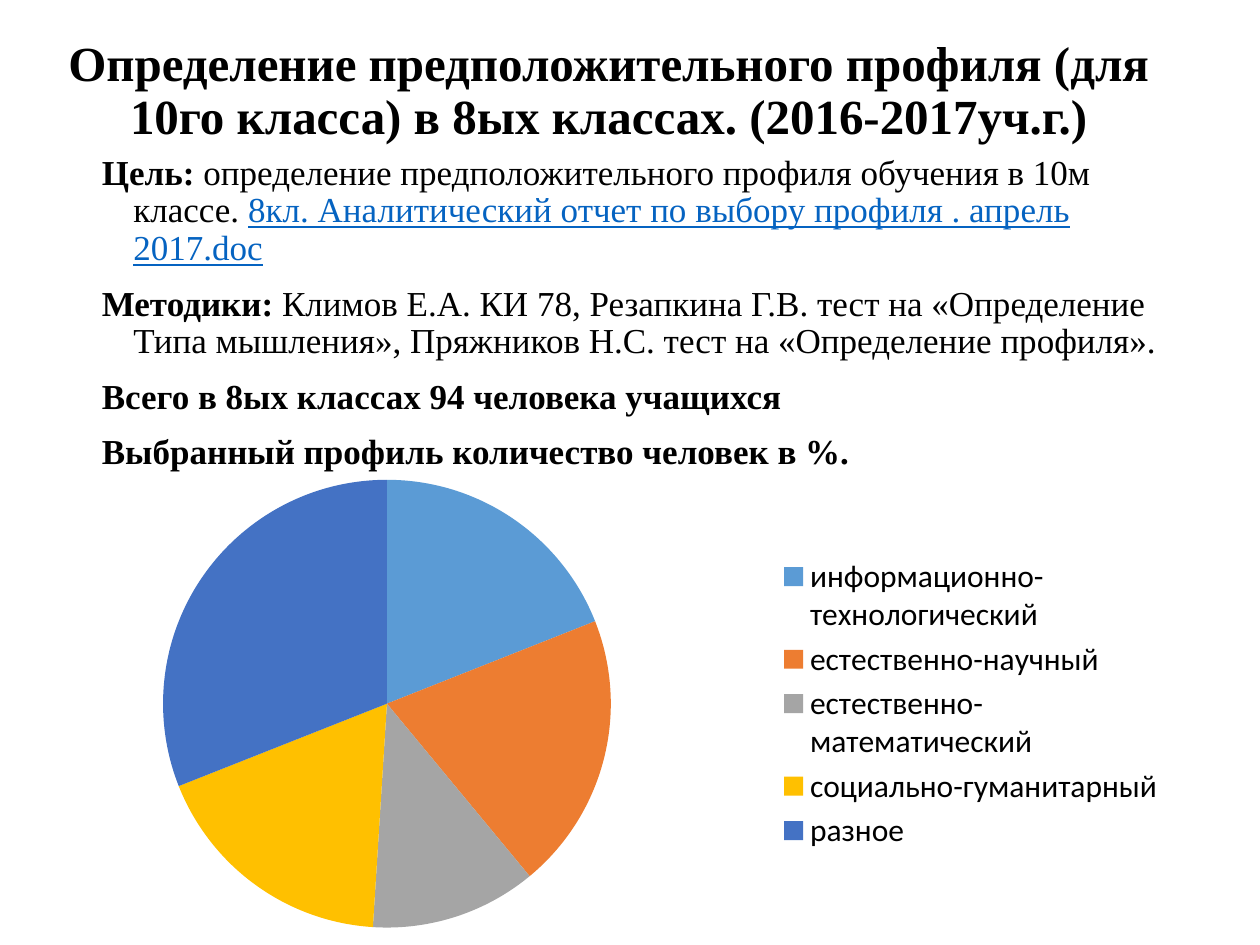
from pptx import Presentation
from pptx.chart.data import CategoryChartData
from pptx.dml.color import RGBColor
from pptx.enum.chart import XL_CHART_TYPE, XL_LEGEND_POSITION
from pptx.enum.text import MSO_ANCHOR, MSO_AUTO_SIZE, PP_ALIGN
from pptx.util import Inches, Pt

PIE = XL_CHART_TYPE.PIE
LEGEND_RIGHT = XL_LEGEND_POSITION.RIGHT
MIDDLE = MSO_ANCHOR.MIDDLE
NO_FIT = MSO_AUTO_SIZE.NONE
CENTER = PP_ALIGN.CENTER

BLACK = "000000"
LINK_BLUE = "0563C1"
SERIF = "Times New Roman"
HEADING = {"name": SERIF, "size": Pt(28), "bold": True}
PLAIN = {"name": SERIF, "size": Pt(20), "bold": False}
STRONG = {**PLAIN, "bold": True}
LINKED = {**PLAIN, "underline": True}
CHART_FONT = {"name": "Calibri", "size": Pt(18)}

TITLE = "Определение предположительного профиля (для 10го класса) в 8ых классах. (2016-2017уч.г.)"
PARAGRAPHS = [
    [
        ("Цель:", STRONG, BLACK),
        (" определение предположительного профиля обучения в 10м классе. ", PLAIN, BLACK),
        ("8кл. Аналитический отчет по выбору профиля . апрель 2017.doc", LINKED, LINK_BLUE),
    ],
    [
        ("Методики:", STRONG, BLACK),
        (" Климов Е.А. КИ 78, Резапкина Г.В. тест на «Определение Типа мышления», "
         "Пряжников Н.С. тест на «Определение профиля».", PLAIN, BLACK),
    ],
    [("Всего в 8ых классах 94 человека учащихся", STRONG, BLACK)],
    [("Выбранный профиль количество человек в %.", STRONG, BLACK)],
]
PROFILES = [
    ("информационно-технологический", 19, "5B9BD5"),
    ("естественно-научный", 20, "ED7D31"),
    ("естественно-математический", 12, "A5A5A5"),
    ("социально-гуманитарный", 18, "FFC000"),
    ("разное", 31, "4472C4"),
]


def set_font(font, values, color):
    for name, value in values.items():
        setattr(font, name, value)
    font.color.rgb = RGBColor.from_string(color)


def add_span(para, text, values, color):
    span = para.add_run()
    span.text = text
    set_font(span.font, values, color)


def place_title(page):
    box = page.shapes.title
    box.left, box.top, box.width, box.height = map(Inches, (0.34, 0.42, 8.98, 0.62))
    frame = box.text_frame
    frame.word_wrap = True
    frame.auto_size = NO_FIT
    frame.vertical_anchor = MIDDLE
    para = frame.paragraphs[0]
    para.alignment = CENTER
    para.line_spacing = 0.9
    add_span(para, TITLE, HEADING, BLACK)


def add_body(page):
    frame = page.shapes.add_textbox(*map(Inches, (0.71, 1.18, 8.61, 6.08))).text_frame
    frame.word_wrap = True
    for index, spans in enumerate(PARAGRAPHS):
        para = frame.add_paragraph() if index else frame.paragraphs[0]
        para.line_spacing = 0.9
        para.space_before = Pt(10 if index else 0)
        properties = para._p.get_or_add_pPr()
        properties.set("marL", str(Inches(0.25)))
        properties.set("indent", str(Inches(-0.25)))
        for span in spans:
            add_span(para, *span)


def add_pie(page):
    names, values, colors = zip(*PROFILES)
    data = CategoryChartData()
    data.categories = names
    data.add_series("Series 1", values)
    chart = page.shapes.add_chart(PIE, *map(Inches, (0, 3.67, 9.35, 3.83)), data).chart
    chart.has_title = False
    set_font(chart.font, CHART_FONT, BLACK)
    chart.has_legend = True
    chart.legend.position = LEGEND_RIGHT
    chart.legend.include_in_layout = False
    plot = chart.plots[0]
    plot.vary_by_categories = True
    for index, color in enumerate(colors):
        fill = plot.series[0].points[index].format.fill
        fill.solid()
        fill.fore_color.rgb = RGBColor.from_string(color)


def main():
    deck = Presentation()
    deck.slide_width, deck.slide_height = Inches(10), Inches(7.5)
    page = deck.slides.add_slide(deck.slide_layouts.get_by_name("Title Only"))
    place_title(page)
    add_body(page)
    add_pie(page)
    deck.save("out.pptx")


if __name__ == "__main__":
    main()
